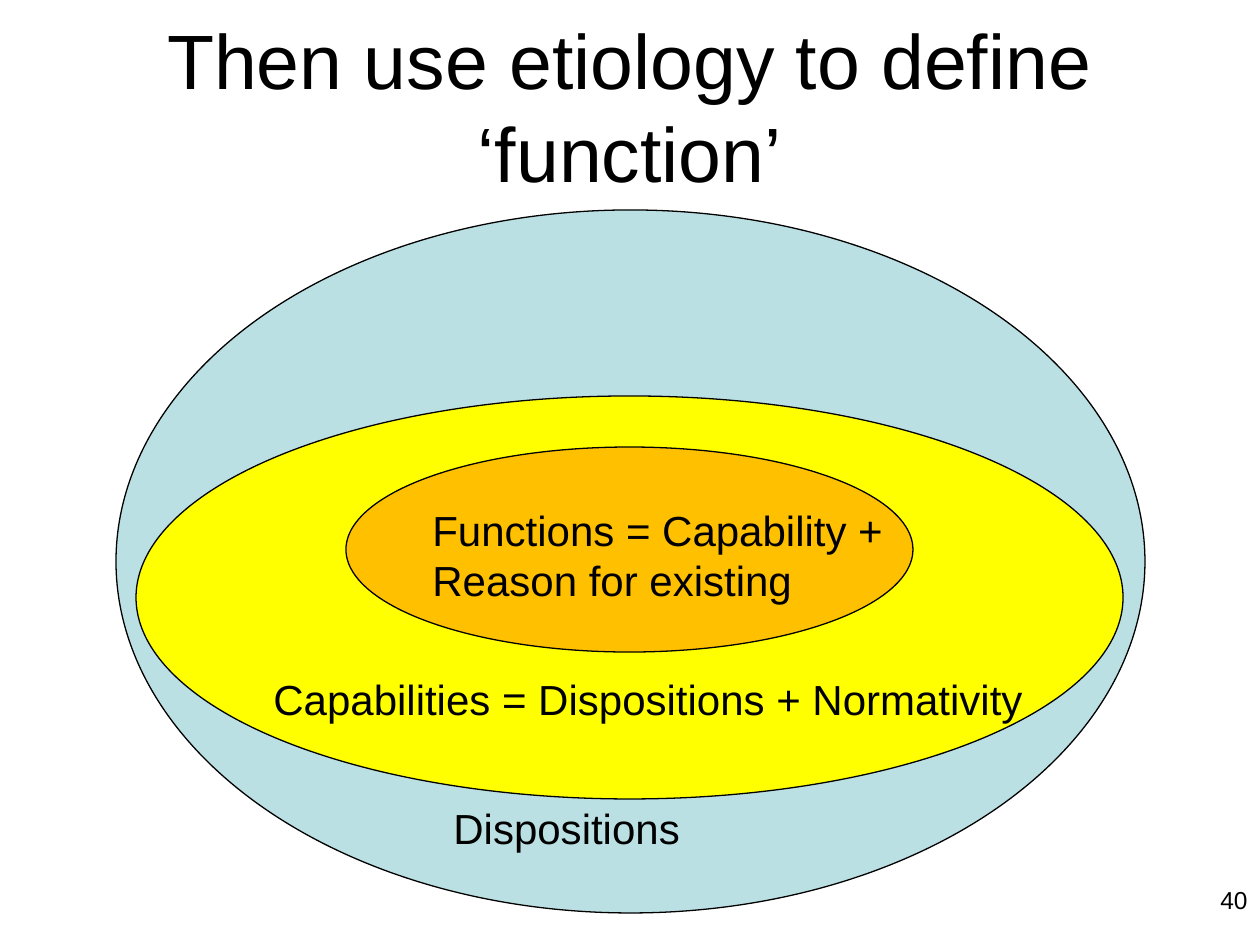
from typing import NamedTuple

from pptx import Presentation
from pptx.dml.color import RGBColor
from pptx.enum.shapes import MSO_SHAPE
from pptx.enum.text import MSO_ANCHOR, PP_ALIGN
from pptx.slide import Slide
from pptx.util import Emu, Pt

OVAL = MSO_SHAPE.OVAL
TOP, MIDDLE = MSO_ANCHOR.TOP, MSO_ANCHOR.MIDDLE
LEFT, CENTER, RIGHT = PP_ALIGN.LEFT, PP_ALIGN.CENTER, PP_ALIGN.RIGHT

PX_PER_INCH = 126
FONT = "Arial"
COLORS = {
    "black": "000000",
    "pale_blue": "BBE0E3",
    "yellow": "FFFF00",
    "orange": "FFC000",
}


class Box(NamedTuple):
    left: int
    top: int
    width: int
    height: int


class Ring(NamedTuple):
    box: Box
    fill: str


class Label(NamedTuple):
    text: str
    box: Box
    size: int = 24
    align: PP_ALIGN = LEFT
    anchor: MSO_ANCHOR = TOP


RINGS = [
    Ring(Box(116, 210, 1029, 703), "pale_blue"),
    Ring(Box(136, 396, 987, 403), "yellow"),
    Ring(Box(346, 447, 567, 205), "orange"),
]
LABELS = [
    Label("Then use etiology to define ‘function’", Box(0, 0, 1260, 210), 44, CENTER, MIDDLE),
    Label("40", Box(966, 879, 294, 66), 14, RIGHT),
    Label("Dispositions", Box(441, 796, 577, 64)),
    Label("Functions = Capability + Reason for existing", Box(420, 498, 494, 115)),
    Label("Capabilities = Dispositions + Normativity", Box(261, 667, 813, 64)),
]


def px(length: int) -> Emu:
    return Emu(round(length * 914400 / PX_PER_INCH))


def color(name: str) -> RGBColor:
    return RGBColor.from_string(COLORS[name])


def draw_ring(slide: Slide, ring: Ring) -> None:
    oval = slide.shapes.add_shape(OVAL, *map(px, ring.box))
    oval.shadow.inherit = False
    oval.fill.solid()
    oval.fill.fore_color.rgb = color(ring.fill)
    oval.line.color.rgb = color("black")
    oval.line.width = Pt(0.75)


def draw_label(slide: Slide, label: Label) -> None:
    frame = slide.shapes.add_textbox(*map(px, label.box)).text_frame
    frame.word_wrap = True
    frame.vertical_anchor = label.anchor
    paragraph = frame.paragraphs[0]
    paragraph.alignment = label.align
    run = paragraph.add_run()
    run.text = label.text
    run.font.name = FONT
    run.font.size = Pt(label.size)
    run.font.color.rgb = color("black")


def main() -> None:
    deck = Presentation()
    deck.slide_width, deck.slide_height = px(1260), px(945)
    slide = deck.slides.add_slide(deck.slide_layouts[6])
    for ring in RINGS:
        draw_ring(slide, ring)
    for label in LABELS:
        draw_label(slide, label)
    deck.save("out.pptx")


if __name__ == "__main__":
    main()
